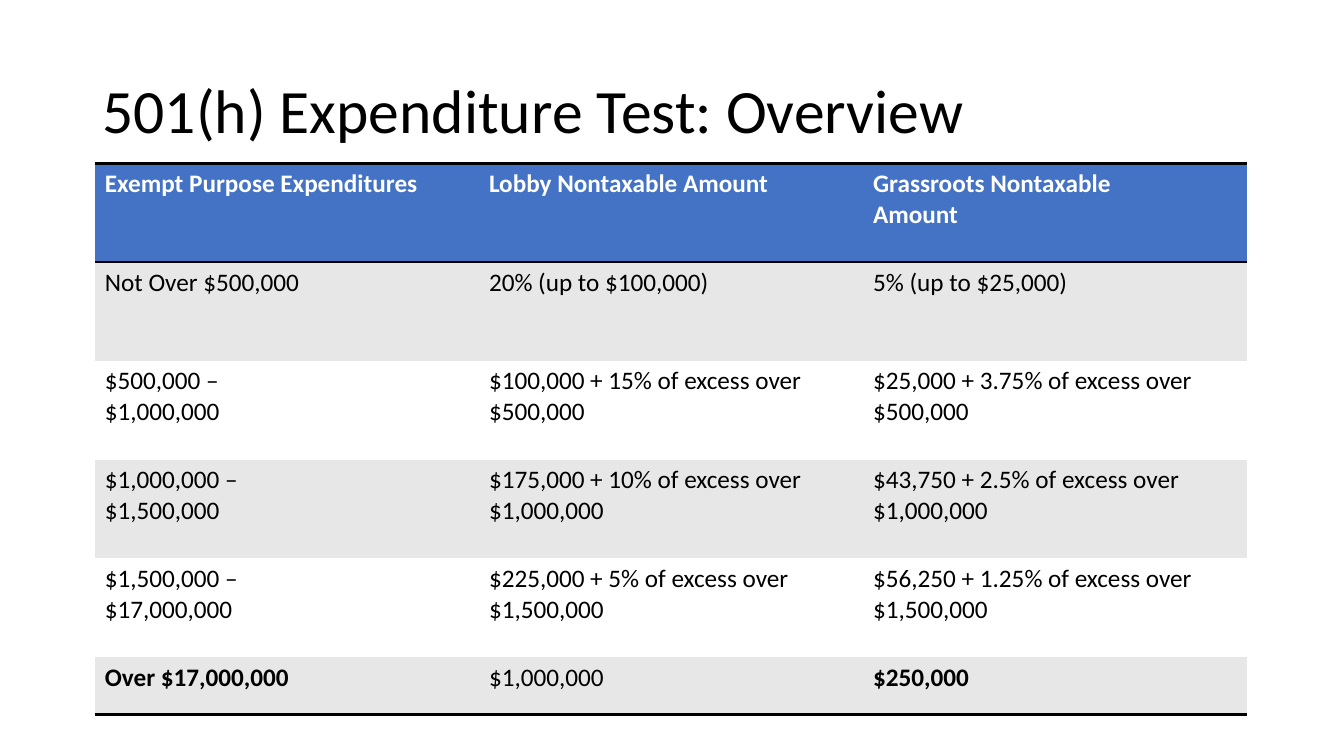
from lxml.etree import SubElement
from pptx import Presentation
from pptx.dml.color import RGBColor
from pptx.enum.text import MSO_ANCHOR
from pptx.oxml.ns import qn
from pptx.util import Inches, Pt

BLACK = RGBColor(0x00, 0x00, 0x00)
WHITE = RGBColor(0xFF, 0xFF, 0xFF)
BLUE = RGBColor(0x44, 0x72, 0xC4)
GREY = RGBColor(0xE7, 0xE7, 0xE7)

FONT = "Calibri"
NO_GRID_STYLE = "{2D5ABB26-0587-4C30-8999-92F81FD0307C}"
COLUMN_WIDTH = 3.81
ROW_HEIGHTS = [0.98] * 5 + [0.57]

# A line break inside an entry starts a new paragraph.
EXPENDITURE_ROWS = [
    ["Exempt Purpose Expenditures", "Lobby Nontaxable Amount",
     "Grassroots Nontaxable\nAmount"],
    ["Not Over $500,000", "20% (up to $100,000)", "5% (up to $25,000)"],
    ["$500,000 –\n$1,000,000", "$100,000 + 15% of excess over $500,000",
     "$25,000 + 3.75% of excess over $500,000"],
    ["$1,000,000 –\n$1,500,000", "$175,000 + 10% of excess over $1,000,000",
     "$43,750 + 2.5% of excess over $1,000,000"],
    ["$1,500,000 –\n$17,000,000", "$225,000 + 5% of excess over $1,500,000",
     "$56,250 + 1.25% of excess over $1,500,000"],
    ["Over $17,000,000", "$1,000,000", "$250,000"],
]
LAST_ROW = len(EXPENDITURE_ROWS) - 1


def add_run(paragraph, text, size, color, bold=False):
    run = paragraph.add_run()
    run.text = text
    run.font.name = FONT
    run.font.size = Pt(size)
    run.font.bold = bold
    run.font.color.rgb = color


def add_title(slide, text):
    title = slide.shapes.add_textbox(
        Inches(0.92), Inches(0.4), Inches(11.5), Inches(1.45))
    frame = title.text_frame
    frame.word_wrap = True
    frame.vertical_anchor = MSO_ANCHOR.MIDDLE
    paragraph = frame.paragraphs[0]
    paragraph.line_spacing = 0.9
    add_run(paragraph, text, 44, BLACK)


def add_border(cell, tag):
    """Draw one black cell edge; call before the cell is filled."""
    line = SubElement(cell._tc.get_or_add_tcPr(), qn(tag), w=str(Pt(2)))
    fill = SubElement(line, qn("a:solidFill"))
    SubElement(fill, qn("a:srgbClr"), val=str(BLACK))


def fill_cell(cell, text, fill_color, text_color, bold):
    cell.fill.solid()
    cell.fill.fore_color.rgb = fill_color
    frame = cell.text_frame
    for index, line in enumerate(text.split("\n")):
        paragraph = frame.add_paragraph() if index else frame.paragraphs[0]
        add_run(paragraph, line, 18, text_color, bold)


def add_expenditure_table(slide):
    column_count = len(EXPENDITURE_ROWS[0])
    table = slide.shapes.add_table(
        len(EXPENDITURE_ROWS), column_count, Inches(0.94), Inches(1.62),
        Inches(COLUMN_WIDTH * column_count), Inches(sum(ROW_HEIGHTS))).table
    table._tbl.tblPr.find(qn("a:tableStyleId")).text = NO_GRID_STYLE
    table.horz_banding = False
    for column in table.columns:
        column.width = Inches(COLUMN_WIDTH)
    for row, height in zip(table.rows, ROW_HEIGHTS):
        row.height = Inches(height)

    for row_index, entries in enumerate(EXPENDITURE_ROWS):
        is_header = row_index == 0
        is_last = row_index == LAST_ROW
        band_color = GREY if row_index % 2 else WHITE
        for column_index, text in enumerate(entries):
            cell = table.cell(row_index, column_index)
            if is_header:
                add_border(cell, "a:lnT")
            if is_header or is_last:
                add_border(cell, "a:lnB")
            bold = is_header or (is_last and column_index != 1)
            fill_cell(cell, text, BLUE if is_header else band_color,
                      WHITE if is_header else BLACK, bold)


def main():
    presentation = Presentation()
    presentation.slide_width = Inches(13.33)
    presentation.slide_height = Inches(7.5)
    slide = presentation.slides.add_slide(presentation.slide_layouts[6])
    add_title(slide, "501(h) Expenditure Test: Overview")
    add_expenditure_table(slide)
    presentation.save("out.pptx")


if __name__ == "__main__":
    main()
